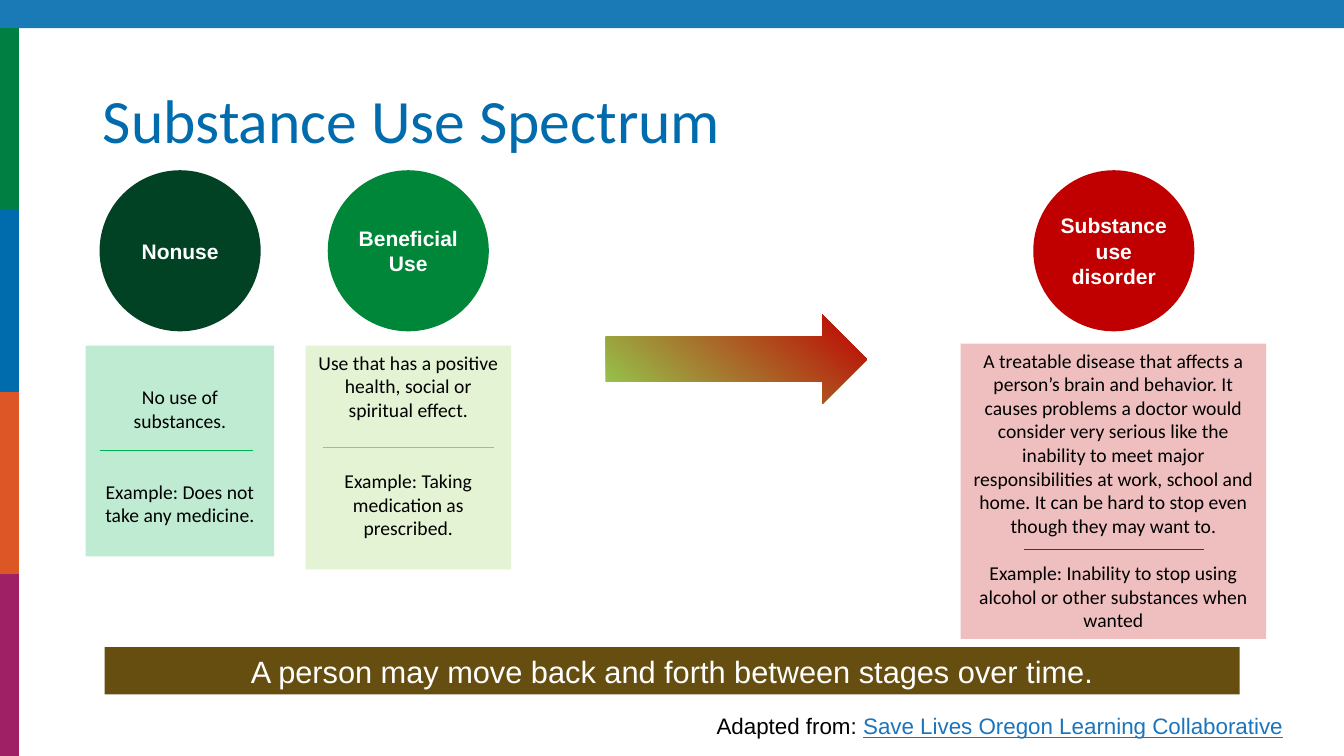
from dataclasses import dataclass

from lxml import etree
from pptx import Presentation
from pptx.dml.color import RGBColor
from pptx.enum.shapes import MSO_CONNECTOR, MSO_SHAPE
from pptx.enum.text import MSO_ANCHOR, MSO_AUTO_SIZE, PP_ALIGN
from pptx.oxml.ns import qn
from pptx.util import Cm, Pt

RECT, OVAL, ARROW = MSO_SHAPE.RECTANGLE, MSO_SHAPE.OVAL, MSO_SHAPE.RIGHT_ARROW
STRAIGHT = MSO_CONNECTOR.STRAIGHT
LEFT, CENTER = PP_ALIGN.LEFT, PP_ALIGN.CENTER
TOP, MIDDLE, BOTTOM = MSO_ANCHOR.TOP, MSO_ANCHOR.MIDDLE, MSO_ANCHOR.BOTTOM


@dataclass(frozen=True)
class Theme:
    blue: str = "006CAD"
    plum: str = "9F2065"
    orange: str = "DC5626"
    green: str = "007F43"
    nonuse: str = "004223"
    nonuse_tint: str = "00B050"
    beneficial: str = "008639"
    beneficial_tint: str = "92D050"
    disorder: str = "C00000"
    brown: str = "5E4505"
    link: str = "1B75BC"
    white: str = "FFFFFF"
    black: str = "000000"
    heading_font: str = "Calibri"
    label_font: str = "Arial"
    title_size: int = 44
    banner_size: int = 22
    source_size: int = 16
    label_size: int = 15
    body_size: int = 14


T = Theme()


def write(p, text, size=T.body_size, font=T.label_font, color=T.black,
          bold=False, underline=False, align=CENTER, before=0):
    p.alignment = align
    if before:
        p.space_before = Pt(before)
    r = p.add_run()
    r.text = text
    r.font.size, r.font.name = Pt(size), font
    r.font.bold, r.font.underline = bold, underline
    r.font.color.rgb = RGBColor.from_string(color)


def add_block(kind, x, y, w, h, color, opacity=100):
    sp = slide.shapes.add_shape(kind, Cm(x), Cm(y), Cm(w), Cm(h))
    sp.shadow.inherit = False
    sp.line.fill.background()
    sp.fill.solid()
    sp.fill.fore_color.rgb = RGBColor.from_string(color)
    if opacity < 100:
        clr = sp.fill._xPr.find(".//" + qn("a:srgbClr"))
        etree.SubElement(clr, qn("a:alpha"), val=str(opacity * 1000))
    sp.text_frame.word_wrap = True
    return sp


prs = Presentation()
prs.slide_width, prs.slide_height = Cm(33.87), Cm(19.05)
slide = prs.slides.add_slide(prs.slide_layouts[5])

# Top bar and side strips
BAR_H = 0.71
STRIP_H = (19.05 - BAR_H) / 4
add_block(RECT, 0, 0, 33.87, BAR_H, T.blue, 90)
for i, color in enumerate((T.green, T.blue, T.orange, T.plum)):
    add_block(RECT, 0, BAR_H + i * STRIP_H, 0.48, STRIP_H, color)

# Title
title = slide.shapes.title
title.left, title.top, title.width, title.height = Cm(2.34), Cm(0.41), Cm(29.21), Cm(3.68)
tf = title.text_frame
tf.auto_size, tf.vertical_anchor = MSO_AUTO_SIZE.NONE, BOTTOM
tf.paragraphs[0].line_spacing = 0.9
write(tf.paragraphs[0], "Substance Use Spectrum", size=T.title_size,
      font=T.heading_font, color=T.blue, align=LEFT)

# Stages: label, circle left and colour, box, tint, top inset, gap, rule, texts
stages = [
    ("Nonuse", 2.51, T.nonuse, (2.16, 8.71, 4.75, 5.31), T.nonuse_tint, 0.99, 34,
     (2.51, 6.38, 11.35),
     "No use of substances.",
     "Example: Does not take any medicine."),
    ("Beneficial Use", 8.26, T.beneficial, (7.7, 8.71, 5.18, 5.64), T.beneficial_tint, 0.13, 34,
     (8.13, 12.45, 11.28),
     "Use that has a positive health, social or spiritual effect.",
     "Example: Taking medication as prescribed."),
    ("Substance use disorder", 26.04, T.disorder, (24.21, 8.66, 7.7, 7.44), T.disorder, 0.13, 17,
     (25.81, 30.33, 13.84),
     "A treatable disease that affects a person’s brain and behavior. It causes problems "
     "a doctor would consider very serious like the inability to meet major responsibilities "
     "at work, school and home. It can be hard to stop even though they may want to.",
     "Example: Inability to stop using alcohol or other substances when wanted"),
]
for label, left, color, box, tint, inset, gap, (x1, x2, y), meaning, example in stages:
    # Description box
    tf = add_block(RECT, *box, tint, 25).text_frame
    tf.vertical_anchor, tf.margin_top = TOP, Cm(inset)
    write(tf.paragraphs[0], meaning, font=T.heading_font)
    write(tf.add_paragraph(), example, font=T.heading_font, before=gap)

    # Rule between meaning and example
    rule = slide.shapes.add_connector(STRAIGHT, Cm(x1), Cm(y), Cm(x2), Cm(y))
    rule.line.width = Pt(1)
    rule.line.color.rgb = RGBColor.from_string(tint)
    etree.SubElement(rule._element.spPr, qn("a:effectLst"))

    # Circle
    tf = add_block(OVAL, left, 4.29, 4.06, 4.06, color).text_frame
    tf.margin_left = tf.margin_right = tf.margin_top = tf.margin_bottom = 0
    tf.vertical_anchor = MIDDLE
    write(tf.paragraphs[0], label, size=T.label_size, color=T.white, bold=True)

# Gradient arrow
sp = add_block(ARROW, 15.27, 7.92, 6.58, 2.26, T.disorder)
sp.fill.gradient()
sp.fill.gradient_angle = 50
for stop, color in zip(sp.fill.gradient_stops, (T.beneficial_tint, T.disorder)):
    stop.color.rgb = RGBColor.from_string(color)

# Banner
tf = add_block(RECT, 2.64, 16.31, 28.6, 1.19, T.brown, 95).text_frame
tf.vertical_anchor = MIDDLE
write(tf.paragraphs[0], "A person may move back and forth between stages over time.",
      size=T.banner_size, color=T.white)

# Source line
tf = slide.shapes.add_textbox(Cm(17.81), Cm(17.83), Cm(15.93), Cm(0.94)).text_frame
tf.word_wrap = True
p = tf.paragraphs[0]
write(p, "Adapted from: ", size=T.source_size, align=LEFT)
write(p, "Save Lives Oregon Learning Collaborative", size=T.source_size,
      color=T.link, underline=True, align=LEFT)

prs.save("out.pptx")
